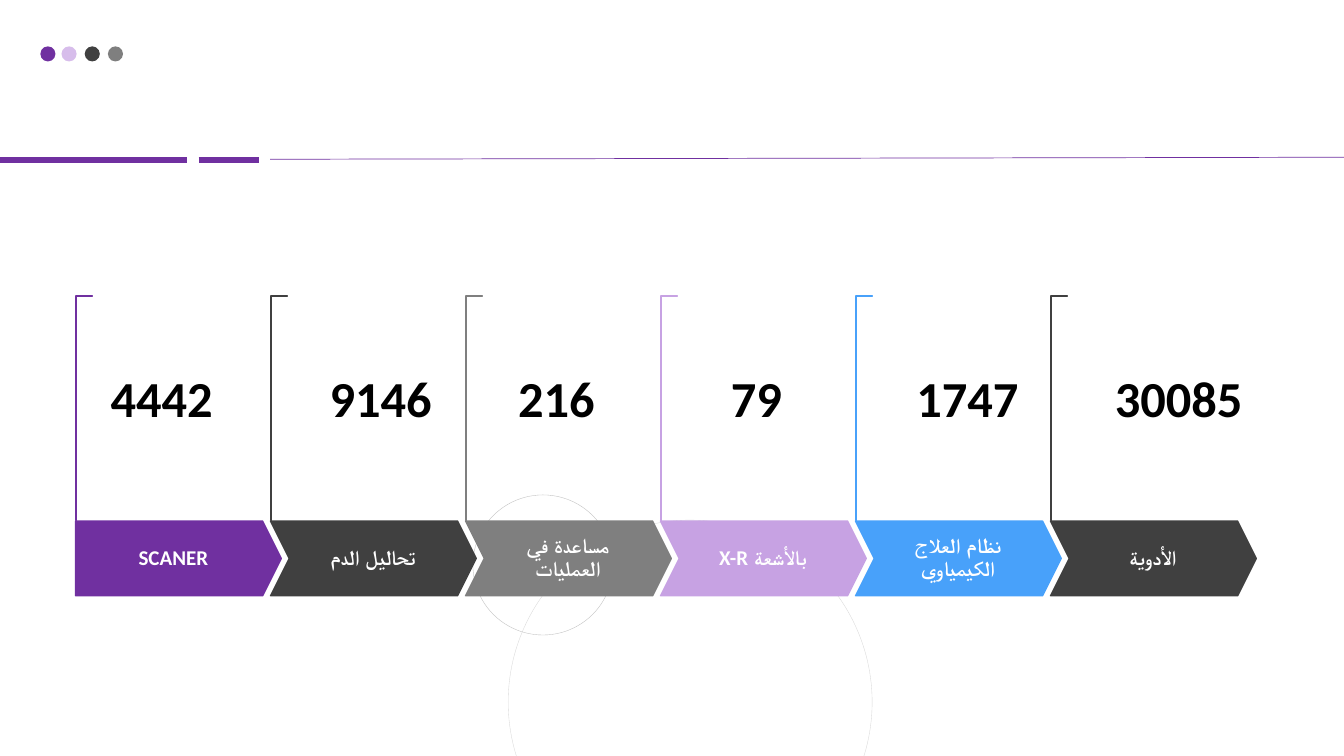
from lxml.etree import SubElement
from pptx import Presentation
from pptx.dml.color import RGBColor
from pptx.enum.shapes import MSO_CONNECTOR, MSO_SHAPE as Shape
from pptx.enum.text import MSO_ANCHOR as Anchor, MSO_AUTO_SIZE as AutoSize, PP_ALIGN as Align
from pptx.oxml.ns import qn
from pptx.util import Inches, Pt

PURPLE, LILAC, BLUE = "7030A0", "C7A2E3", "48A1FA"
DARK, GREY = "404040", "7F7F7F"
WHITE, BLACK = "FFFFFF", "000000"


def color(hex_code):
    return RGBColor.from_string(hex_code)


class SlideBuilder:
    font = "Calibri"

    def __init__(self, slide):
        self.slide = slide
        self.shapes = slide.shapes

    def start_group(self):
        self.shapes = self.slide.shapes.add_group_shape().shapes

    def end_group(self):
        self.shapes = self.slide.shapes

    def line(self, x1, y1, x2, y2, hex_code, width):
        rule = self.shapes.add_connector(
            MSO_CONNECTOR.STRAIGHT, Inches(x1), Inches(y1), Inches(x2), Inches(y2))
        rule.line.color.rgb = color(hex_code)
        rule.line.width = Pt(width)
        SubElement(rule._element.spPr, qn("a:effectLst"))

    def shape(self, kind, box, fill=None, line=None, width=1, adjust=(), rotation=0, alpha=None):
        shape = self.shapes.add_shape(kind, *map(Inches, box))
        shape.shadow.inherit = False
        shape.rotation = rotation
        for i, value in enumerate(adjust):
            shape.adjustments[i] = value
        if fill:
            shape.fill.solid()
            shape.fill.fore_color.rgb = color(fill)
        else:
            shape.fill.background()
        if line:
            shape.line.color.rgb = color(line)
            shape.line.width = Pt(width)
        else:
            shape.line.fill.background()
        if alpha:
            tint = shape._element.spPr.find(qn("a:solidFill"))[0]
            SubElement(tint, qn("a:alpha")).set("val", str(alpha * 1000))

    def text(self, words, box, size, hex_code, rtl=False):
        frame = self.shapes.add_textbox(*map(Inches, box)).text_frame
        frame.word_wrap = True
        paragraph = frame.paragraphs[0]
        run = paragraph.add_run()
        run.text = words
        run.font.name = self.font
        run.font.size = Pt(size)
        run.font.bold = True
        run.font.color.rgb = color(hex_code)
        if rtl:
            paragraph._p.get_or_add_pPr().set("rtl", "1")
        return frame

    def label(self, words, box, rtl):
        frame = self.text(words, box, 15, WHITE, rtl)
        frame.auto_size = AutoSize.NONE
        frame.vertical_anchor = Anchor.MIDDLE
        frame.margin_top = frame.margin_bottom = Inches(0.21)
        frame.paragraphs[0].alignment = Align.CENTER
        frame.paragraphs[0].line_spacing = 0.9

    def number(self, words, left, width):
        frame = self.text(words, (left, 3.59, width, 0.71), 36, BLACK)
        frame.auto_size = AutoSize.SHAPE_TO_FIT_TEXT


# label, colour, right-to-left, count, count left, count width
SERVICES = [
    ("SCANER", PURPLE, False, "4442", 1, 1.3),
    ("تحاليل الدم", DARK, False, "9146", 3.17, 1.28),
    ("مساعدة في العمليات", GREY, False, "216", 5.04, 1.15),
    ("بالأشعة X-R", LILAC, True, "79", 7.15, 1.15),
    ("نظام العلاج الكيمياوي", BLUE, False, "1747", 8.99, 1.31),
    ("الأدوية", DARK, False, "30085", 10.96, 1.71),
]
FIRST_LEFT, LAST_LEFT = 0.75, 10.42
STEP = (LAST_LEFT - FIRST_LEFT) / (len(SERVICES) - 1)
ARROW_TOP, ARROW_WIDTH, ARROW_HEIGHT = 5.17, 2.04, 0.74


def main():
    deck = Presentation()
    deck.slide_width, deck.slide_height = Inches(13.33), Inches(7.5)
    builder = SlideBuilder(deck.slides.add_slide(deck.slide_layouts[6]))

    # Header rules
    builder.line(-0.03, 1.59, 1.85, 1.59, PURPLE, 4.5)
    builder.line(1.97, 1.59, 2.57, 1.59, PURPLE, 4.5)
    builder.line(2.68, 1.58, 13.33, 1.56, PURPLE, 0.5)

    # Header dots
    builder.start_group()
    for left, fill, alpha in ((0.4, PURPLE, None), (0.61, LILAC, 70),
                              (0.84, DARK, None), (1.07, GREY, None)):
        builder.shape(Shape.OVAL, (left, 0.46, 0.15, 0.15), fill, alpha=alpha)
    builder.end_group()

    # Background rings
    builder.shape(Shape.OVAL, (5.04, 5.16, 3.61, 3.61), line="D9D9D9", width=0.25)
    builder.shape(Shape.OVAL, (4.69, 4.91, 1.39, 1.39), line="BFBFBF", width=0.25)

    # Arrow chain with brackets
    builder.start_group()
    for i, (name, tone, rtl, *_) in enumerate(SERVICES):
        left = FIRST_LEFT + i * STEP
        builder.shape(Shape.CORNER, (left - 1.03, 3.97, 2.23, 0.16), WHITE, tone,
                      adjust=(0.01, 0.01), rotation=90)
        builder.shape(Shape.CHEVRON if i else Shape.PENTAGON,
                      (left, ARROW_TOP, ARROW_WIDTH, ARROW_HEIGHT), tone, tone, adjust=(0.25,))
        inset, width = (0.18, 1.67) if i else (0, 1.94)
        builder.label(name, (left + inset, ARROW_TOP, width, ARROW_HEIGHT), rtl)
    builder.end_group()

    # Counts
    for *_, count, left, width in reversed(SERVICES):
        builder.number(count, left, width)

    deck.save("out.pptx")


if __name__ == "__main__":
    main()
